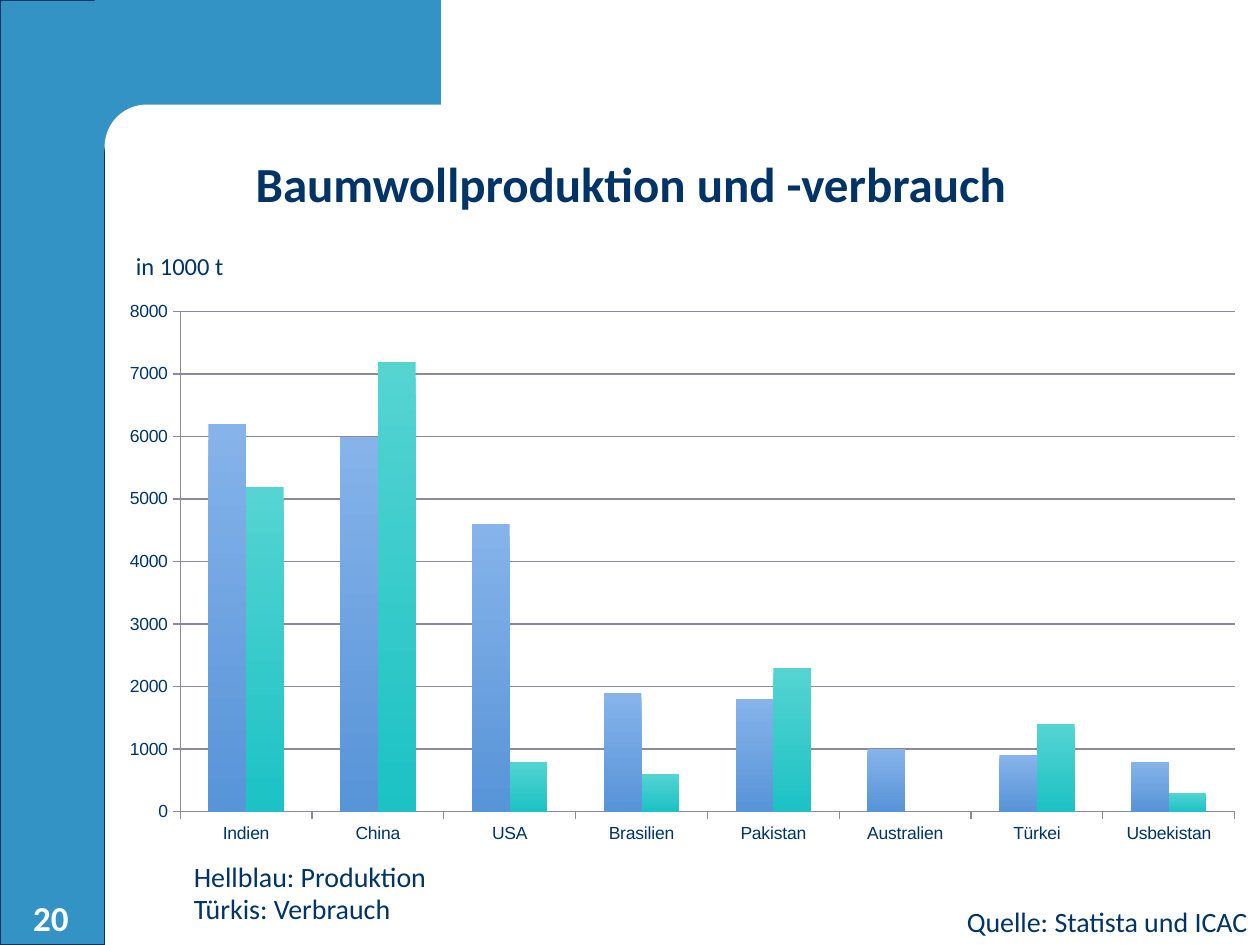
from dataclasses import dataclass

import pptx
import pptx.chart.data
import pptx.dml.color
import pptx.enum.chart
import pptx.enum.shapes
import pptx.enum.text
import pptx.oxml
import pptx.oxml.ns
import pptx.util
from pptx.util import Inches

ALIGN = pptx.enum.text.PP_ALIGN
ANCHOR = pptx.enum.text.MSO_ANCHOR
SHAPE = pptx.enum.shapes.MSO_SHAPE


@dataclass(frozen=True)
class Theme:
    navy: str = "003366"
    band: str = "3493C5"
    white: str = "FFFFFF"
    grid: str = "8A8A9C"
    production: tuple = ("86B3EA", "5794D8")
    consumption: tuple = ("55D4D2", "1CC2C4")
    font: str = "Calibri"
    chart_font: str = "Arial"
    title: int = 28
    number: int = 20
    note: int = 16
    unit: int = 14
    axis: int = 10


THEME = Theme()


def rgb(value):
    return pptx.dml.color.RGBColor.from_string(value)


def add_text(slide, text, box, size=THEME.note, color=THEME.navy, bold=False,
             align=ALIGN.LEFT, anchor=ANCHOR.TOP, wrap=False, spacing=None):
    frame = slide.shapes.add_textbox(*map(Inches, box)).text_frame
    frame.word_wrap = wrap
    frame.vertical_anchor = anchor
    paragraph = frame.paragraphs[0]
    paragraph.text = text
    paragraph.alignment = align
    paragraph.line_spacing = spacing
    font = paragraph.font
    font.name, font.size, font.bold = THEME.font, pptx.util.Pt(size), bold
    font.color.rgb = rgb(color)


def add_panel(slide, kind, box, color, outline=None):
    panel = slide.shapes.add_shape(kind, *map(Inches, box))
    panel.shadow.inherit = False
    panel.fill.solid()
    panel.fill.fore_color.rgb = rgb(color)
    if outline:
        panel.line.color.rgb = rgb(outline)
        panel.line.width = pptx.util.Pt(0.75)
    else:
        panel.line.fill.background()
    return panel


def build_frame(slide, box):
    left, top, width, height = box
    side = 0.83
    add_panel(slide, SHAPE.RECTANGLE, (left, top, side, height), THEME.band, THEME.navy)
    add_panel(slide, SHAPE.RECTANGLE, (left + 0.75, top, 2.75, 1.17), THEME.band)
    corner = add_panel(slide, SHAPE.ROUNDED_RECTANGLE,
                       (left + side, top + side, 5.58, 0.67), THEME.white)
    corner.adjustments[0] = 0.5
    add_text(slide, "20", (left, top + height - 0.36, 0.81, 0.36), size=THEME.number,
             color=THEME.white, bold=True, align=ALIGN.CENTER, anchor=ANCHOR.BOTTOM, wrap=True)


def build_heading(slide, box):
    left, top, width, height = box
    add_text(slide, "Baumwollproduktion und -verbrauch", (left, top, width, 0.93),
             size=THEME.title, bold=True, align=ALIGN.CENTER, anchor=ANCHOR.BOTTOM,
             wrap=True, spacing=0.9)
    add_text(slide, "in 1000 t", (left + 0.34, top + height - 0.34, 0.9, 0.34),
             size=THEME.unit)


def set_plot_layout(chart, x, y, w, h):
    plot_area = chart._chartSpace.chart.plotArea
    for old in plot_area.findall(pptx.oxml.ns.qn("c:layout")):
        plot_area.remove(old)
    values = (("layoutTarget", "inner"), ("xMode", "edge"), ("yMode", "edge"),
              ("x", x), ("y", y), ("w", w), ("h", h))
    parts = "".join(f'<c:{tag} val="{value}"/>' for tag, value in values)
    plot_area.insert(0, pptx.oxml.parse_xml(
        f'<c:layout {pptx.oxml.ns.nsdecls("c")}>'
        f"<c:manualLayout>{parts}</c:manualLayout></c:layout>"))


def build_chart(slide, box):
    data = pptx.chart.data.CategoryChartData()
    data.categories = ["Indien", "China", "USA", "Brasilien", "Pakistan",
                       "Australien", "Türkei", "Usbekistan"]
    data.add_series("Produktion", (6200, 6000, 4600, 1900, 1800, 1000, 900, 800))
    data.add_series("Verbrauch", (5200, 7200, 800, 600, 2300, 0, 1400, 300))
    chart = slide.shapes.add_chart(pptx.enum.chart.XL_CHART_TYPE.COLUMN_CLUSTERED,
                                   *map(Inches, box), data).chart
    chart.has_legend = False
    chart.has_title = False
    chart.font.name = THEME.chart_font
    chart.font.size = pptx.util.Pt(THEME.axis)
    chart.font.color.rgb = rgb(THEME.navy)
    set_plot_layout(chart, 0.05, 0.05, 0.93, 0.89)

    values = chart.value_axis
    values.minimum_scale, values.maximum_scale, values.major_unit = 0, 8000, 1000
    values.has_major_gridlines = True
    for axis in (values, chart.category_axis):
        axis.major_tick_mark = pptx.enum.chart.XL_TICK_MARK.OUTSIDE
        axis.format.line.color.rgb = rgb(THEME.grid)
    values.major_gridlines.format.line.color.rgb = rgb(THEME.grid)

    plot = chart.plots[0]
    plot.vary_by_categories = False
    plot.gap_width, plot.overlap = 150, 0
    for series, shades in zip(plot.series, (THEME.production, THEME.consumption)):
        fill = series.format.fill
        fill.gradient()
        fill.gradient_angle = 270
        for stop, shade in zip(fill.gradient_stops, shades):
            stop.color.rgb = rgb(shade)
        series.invert_if_negative = False


def build_notes(slide, box):
    left, top, width, height = box
    add_text(slide, "Hellblau: Produktion", (left, top, 2.07, 0.37))
    add_text(slide, "Türkis: Verbrauch", (left, top + 0.28, 1.78, 0.35), spacing=0.93)
    add_text(slide, "Quelle: Statista und ICAC",
             (left + width - 2.45, top + height - 0.37, 2.45, 0.37), align=ALIGN.RIGHT)


def main():
    deck = pptx.Presentation()
    deck.slide_width, deck.slide_height = Inches(10), Inches(7.5)
    slide = deck.slides.add_slide(deck.slide_layouts[6])
    build_frame(slide, (0, 0, 10, 7.5))
    build_heading(slide, (0.64, 0.81, 8.73, 1.47))
    build_chart(slide, (0.98, 2.25, 9, 4.46))
    build_notes(slide, (1.44, 6.77, 8.56, 0.73))
    deck.save("out.pptx")


if __name__ == "__main__":
    main()
